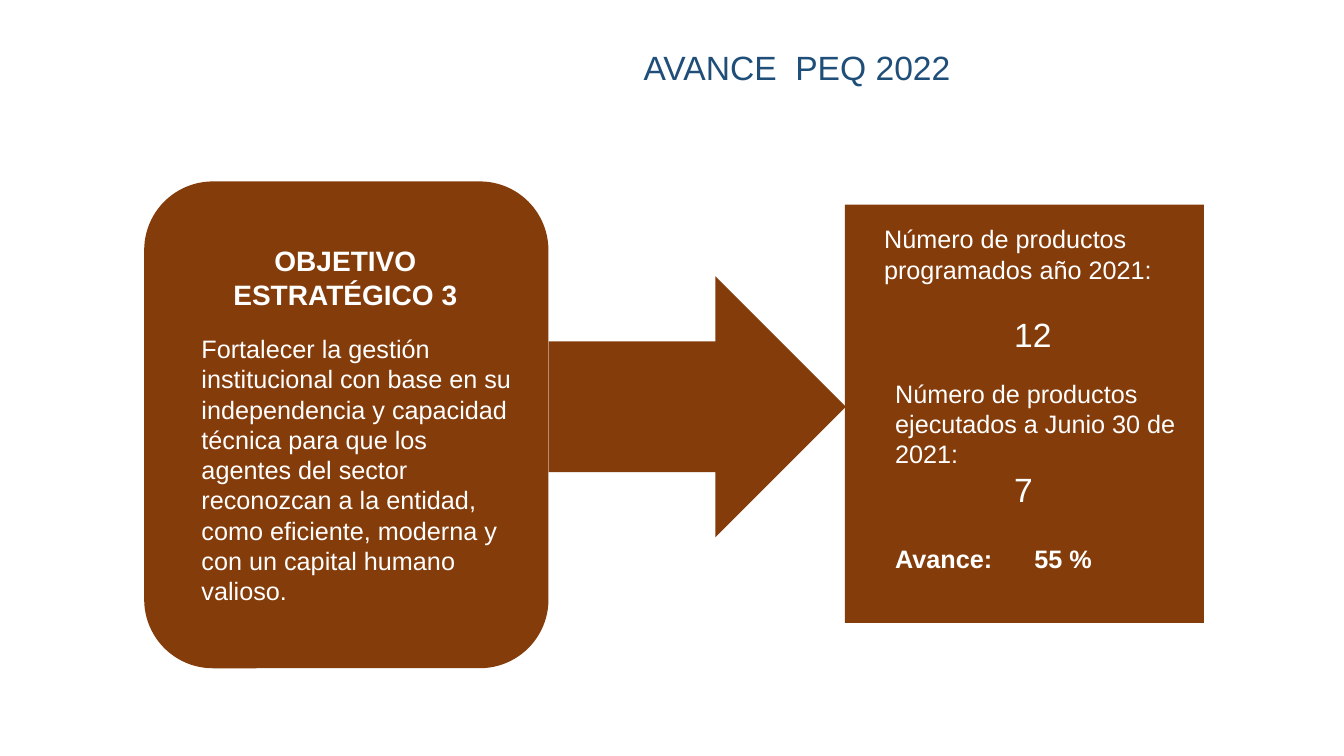
from dataclasses import dataclass

from lxml import etree
from pptx import Presentation
from pptx.dml.color import RGBColor
from pptx.enum.shapes import MSO_SHAPE
from pptx.enum.text import MSO_ANCHOR, MSO_AUTO_SIZE, PP_ALIGN
from pptx.oxml.ns import qn
from pptx.util import Emu, Pt

RECT = MSO_SHAPE.RECTANGLE
ROUND = MSO_SHAPE.ROUNDED_RECTANGLE
ARROW = MSO_SHAPE.RIGHT_ARROW
LEFT, CENTER = PP_ALIGN.LEFT, PP_ALIGN.CENTER
TOP = MSO_ANCHOR.TOP
FIXED = MSO_AUTO_SIZE.NONE
PX = 9144


@dataclass
class Theme:
    font: str = "Arial"
    brown: str = "843C0B"
    blue: str = "1F4E79"
    white: str = "FFFFFF"
    body: int = 18
    head: int = 20
    large: int = 24


class Board:
    """Draws styled elements on the current slide, with lengths in px."""

    def __init__(self, slide, theme):
        self.slide = slide
        self.theme = theme

    def place(self, box):
        return [Emu(n * PX) for n in box]

    def style(self, par, size, color, bold=False, align=LEFT):
        par.alignment = align
        for run in par.runs:
            font = run.font
            font.name = self.theme.font
            font.size = Pt(size)
            font.bold = bold
            font.color.rgb = RGBColor.from_string(color)

    def title(self, box, text):
        shape = self.slide.shapes.title
        shape.left, shape.top, shape.width, shape.height = self.place(box)
        frame = shape.text_frame
        frame.text = text
        frame.auto_size = FIXED
        frame.vertical_anchor = TOP
        self.style(frame.paragraphs[0], self.theme.large, self.theme.blue, align=CENTER)

    def shape(self, kind, box):
        shape = self.slide.shapes.add_shape(kind, *self.place(box))
        shape.shadow.inherit = False
        shape.fill.solid()
        shape.fill.fore_color.rgb = RGBColor.from_string(self.theme.brown)
        shape.line.fill.background()
        return shape

    def label(self, shape, text, size, bold=False, align=LEFT):
        frame = shape.text_frame
        frame.word_wrap = True
        frame.vertical_anchor = TOP
        frame.text = text
        self.style(frame.paragraphs[0], size, self.theme.white, bold, align)
        return frame

    def text(self, box, text, size, bold=False, align=LEFT):
        shape = self.slide.shapes.add_textbox(*self.place(box))
        return self.label(shape, text, size, bold, align)

    def count(self, box, text, value, indent, gap=0):
        frame = self.text(box, text, self.theme.body)
        par = frame.add_paragraph()
        par.text = value
        par.space_before = Pt(gap)
        par._p.get_or_add_pPr().set("marL", str(indent * PX))
        self.style(par, self.theme.large, self.theme.white)

    def rate(self, box, text, stop):
        frame = self.text(box, text, self.theme.body, bold=True)
        props = frame.paragraphs[0]._p.get_or_add_pPr()
        tabs = etree.SubElement(props, qn("a:tabLst"))
        etree.SubElement(tabs, qn("a:tab"), pos=str(stop * PX), algn="l")


def main():
    theme = Theme()
    deck = Presentation()
    deck.slide_width, deck.slide_height = Emu(1333 * PX), Emu(750 * PX)
    board = Board(deck.slides.add_slide(deck.slide_layouts[5]), theme)

    board.title((331, 42, 919, 50), "AVANCE  PEQ 2022")

    panel = board.shape(ROUND, (143, 180, 401, 483))
    panel.adjustments[0] = 0.17
    goal = board.shape(RECT, (190, 326, 335, 283))
    board.label(
        goal,
        "Fortalecer la gestión institucional con base en su independencia y "
        "capacidad técnica para que los agentes del sector reconozcan a la "
        "entidad, como eficiente, moderna y con un capital humano valioso.",
        theme.body,
    )
    board.text((203, 237, 279, 77), "OBJETIVO ESTRATÉGICO 3", theme.head, True, CENTER)

    board.shape(ARROW, (544, 274, 295, 259))
    board.shape(RECT, (838, 203, 356, 415))
    board.count((867, 217, 328, 141), "Número de productos programados año 2021:", "12", 129, 21)
    board.count((878, 370, 305, 141), "Número de productos ejecutados a Junio 30 de 2021:", "7", 118)
    board.rate((878, 534, 305, 40), "Avance:\t55 %", 138)

    deck.save("out.pptx")


if __name__ == "__main__":
    main()
